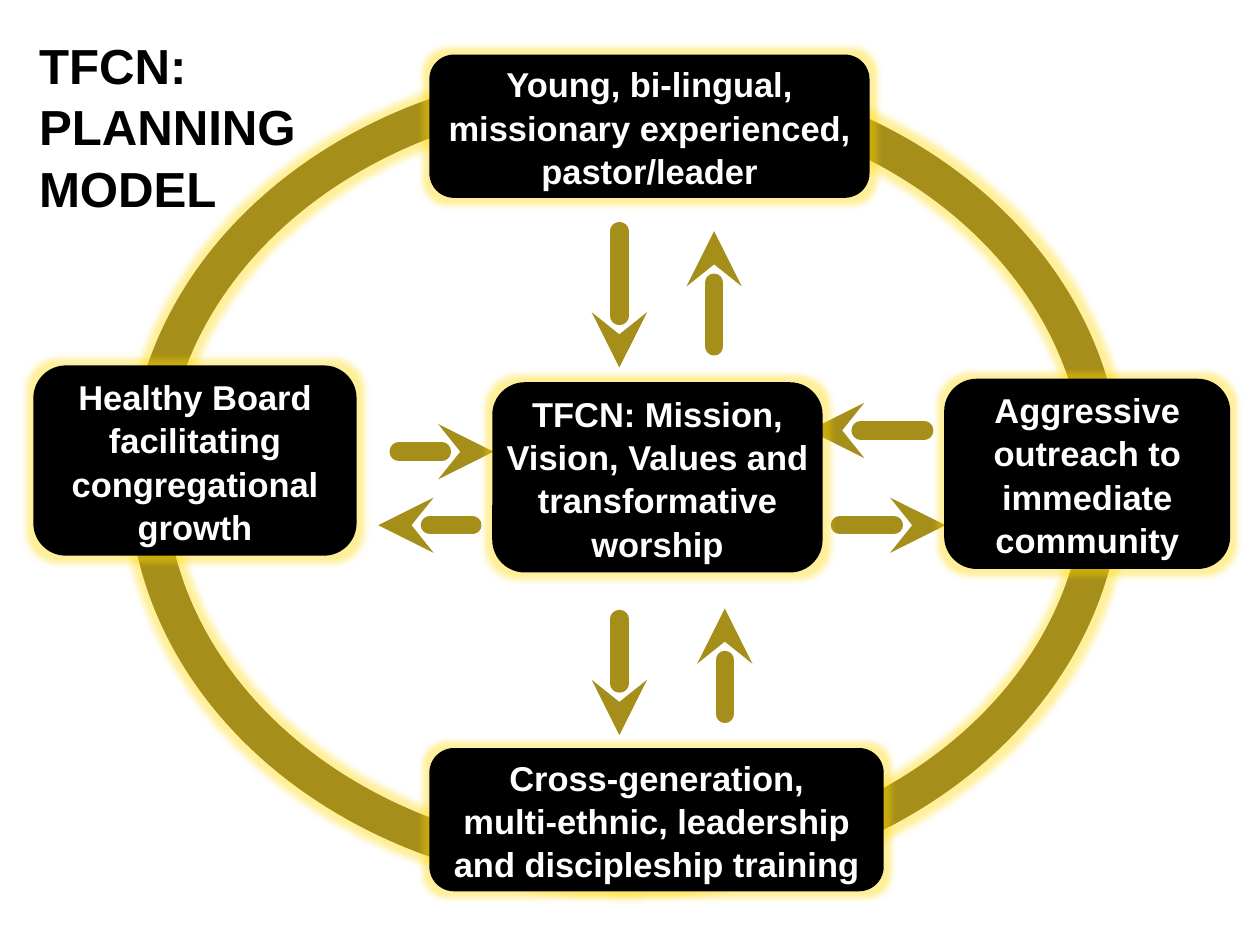
from lxml.etree import SubElement
from pptx import Presentation
from pptx.dml.color import RGBColor
from pptx.enum.shapes import MSO_CONNECTOR, MSO_SHAPE
from pptx.enum.text import MSO_ANCHOR, MSO_AUTO_SIZE, PP_ALIGN
from pptx.oxml.ns import qn
from pptx.util import Inches, Pt

BLACK = RGBColor(0x00, 0x00, 0x00)
WHITE = RGBColor(0xFF, 0xFF, 0xFF)
GOLD = RGBColor(0xA5, 0x8E, 0x1A)
GLOW = RGBColor(0xFF, 0xD8, 0x00)

BOXES = [
    (4.86, 0.63, 4.94, 1.59,
     ["Young, bi-lingual,", "missionary experienced,", "pastor/leader"]),
    (4.86, 8.46, 5.1, 1.59,
     ["Cross-generation,", "multi-ethnic, leadership and discipleship training"]),
    (10.67, 4.29, 3.2, 2.12, ["Aggressive outreach to immediate community"]),
    (5.57, 4.33, 3.7, 2.12,
     ["TFCN: Mission, Vision, Values and transformative worship"]),
    (0.39, 4.14, 3.62, 2.12,
     ["Healthy Board facilitating congregational growth"]),
]

VERTICAL_ARROWS = [(6.99, 6.99, 8.3), (6.99, 2.61, 4.15),
                   (8.18, 8.06, 6.87), (8.06, 3.91, 2.61)]
HORIZONTAL_ARROWS = [(5.93, 9.48, 10.67), (5.93, 5.33, 4.27),
                     (4.86, 10.43, 9.13), (5.1, 4.5, 5.57)]


class PlanningModel:
    font = "Arial"
    line_spacing = 1.05

    def __init__(self, page):
        self.page = page

    def add_text(self, frame, lines, size, color, align, anchor, margins):
        frame.word_wrap = True
        frame.auto_size = MSO_AUTO_SIZE.NONE
        frame.vertical_anchor = anchor
        frame.margin_left = frame.margin_right = Inches(margins[0])
        frame.margin_top = frame.margin_bottom = Inches(margins[1])
        for index, line in enumerate(lines):
            para = frame.add_paragraph() if index else frame.paragraphs[0]
            para.alignment = align
            para.line_spacing = self.line_spacing
            para.space_before = Pt(0)
            span = para.add_run()
            span.text = line
            span.font.name = self.font
            span.font.size = Pt(size)
            span.font.bold = True
            span.font.color.rgb = color

    def title(self, text, left, top, width, height):
        title = self.page.shapes.title
        title.left, title.top = Inches(left), Inches(top)
        title.width, title.height = Inches(width), Inches(height)
        self.add_text(title.text_frame, [text], 40, BLACK, PP_ALIGN.LEFT,
                      MSO_ANCHOR.TOP, (0.14, 0.07))

    def glowing_shape(self, kind, left, top, width, height, color, weight):
        shape = self.page.shapes.add_shape(
            kind, Inches(left), Inches(top), Inches(width), Inches(height))
        shape.line.color.rgb = color
        shape.line.width = Pt(weight)
        shape.shadow.inherit = False
        effects = shape.element.spPr.find(qn("a:effectLst"))
        glow = SubElement(effects, qn("a:glow"), rad=str(Pt(11)))
        tint = SubElement(glow, qn("a:srgbClr"), val=str(GLOW))
        SubElement(tint, qn("a:alpha"), val="40000")
        return shape

    def ring(self, left, top, width, height):
        ring = self.glowing_shape(
            MSO_SHAPE.OVAL, left, top, width, height, GOLD, 30)
        ring.fill.background()

    def box(self, left, top, width, height, lines):
        box = self.glowing_shape(
            MSO_SHAPE.ROUNDED_RECTANGLE, left, top, width, height, BLACK, 2)
        box.fill.solid()
        box.fill.fore_color.rgb = BLACK
        self.add_text(box.text_frame, lines, 28, WHITE, PP_ALIGN.CENTER,
                      MSO_ANCHOR.MIDDLE, (0, 0))

    def arrow(self, start_x, start_y, end_x, end_y):
        arrow = self.page.shapes.add_connector(
            MSO_CONNECTOR.STRAIGHT, Inches(start_x), Inches(start_y),
            Inches(end_x), Inches(end_y))
        arrow.line.color.rgb = GOLD
        arrow.line.width = Pt(15)
        stroke = arrow.element.spPr.find(qn("a:ln"))
        stroke.set("cap", "rnd")
        SubElement(stroke, qn("a:round"))
        SubElement(stroke, qn("a:tailEnd"), type="stealth")
        SubElement(arrow.element.spPr, qn("a:effectLst"))


def main():
    deck = Presentation()
    deck.slide_width, deck.slide_height = Inches(14.22), Inches(10.67)
    model = PlanningModel(deck.slides.add_slide(deck.slide_layouts[5]))
    model.title("TFCN: PLANNING MODEL", 0.3, 0.29, 4.64, 2.16)
    model.ring(1.66, 0.95, 10.79, 8.89)
    for x, start, end in VERTICAL_ARROWS:
        model.arrow(x, start, x, end)
    for y, start, end in HORIZONTAL_ARROWS:
        model.arrow(start, y, end, y)
    for box in BOXES:
        model.box(*box)
    deck.save("out.pptx")


if __name__ == "__main__":
    main()
